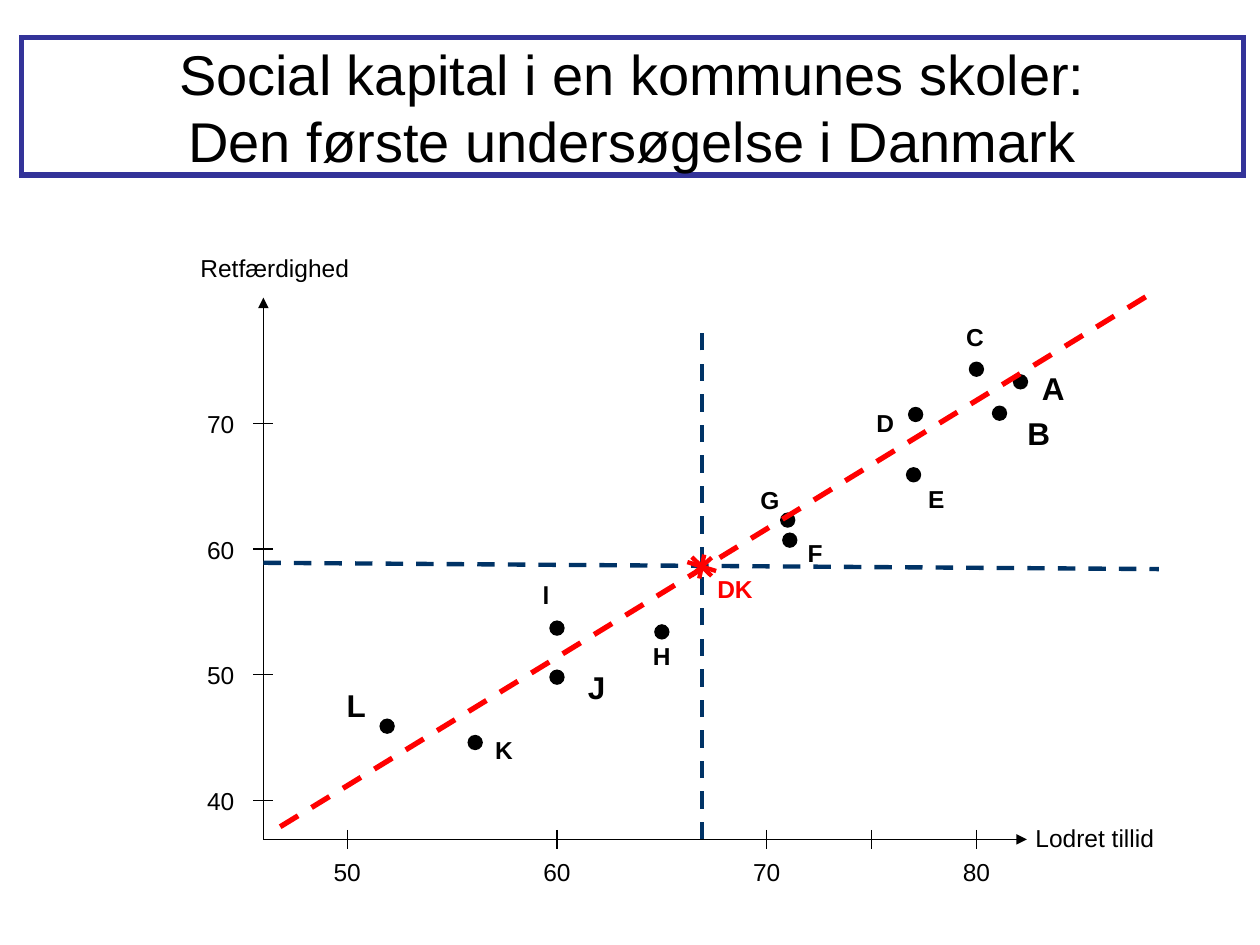
import pptx
import pptx.dml.color
import pptx.enum.dml
import pptx.enum.shapes
import pptx.enum.text
import pptx.oxml
import pptx.util
from pptx.util import Cm

BLACK = pptx.dml.color.RGBColor(0x00, 0x00, 0x00)
RED = pptx.dml.color.RGBColor(0xFF, 0x00, 0x00)
NAVY = pptx.dml.color.RGBColor(0x00, 0x33, 0x66)
FRAME_BLUE = pptx.dml.color.RGBColor(0x33, 0x33, 0x99)

# Axis ranges, in percentage points
X_RANGE = (46, 82.4)
Y_RANGE = (36.9, 80)
DENMARK = (66.9, 58.6)
DOT_SIZE = 0.31

# School: trust, fairness, label offset in cm, label size
SCHOOLS = {
    "A": (82.1, 73.3, 0.66, 0.13, 18),
    "B": (81.1, 70.8, 0.79, 0.41, 18),
    "C": (80, 74.3, -0.03, -0.67, 14),
    "D": (77.1, 70.7, -0.61, 0.15, 14),
    "E": (77, 65.9, 0.46, 0.48, 14),
    "F": (71.1, 60.7, 0.51, 0.25, 14),
    "G": (71, 62.3, -0.36, -0.42, 14),
    "H": (65, 53.4, 0, 0.47, 14),
    "l": (60, 53.7, -0.22, -0.69, 14),
    "J": (60, 49.8, 0.8, 0.2, 18),
    "K": (56.1, 44.6, 0.58, 0.13, 14),
    "L": (51.9, 45.9, -0.62, -0.43, 18),
}


def append_drawing_element(parent, markup):
    namespace = 'xmlns:a="http://schemas.openxmlformats.org/drawingml/2006/main"'
    parent.append(pptx.oxml.parse_xml(f"<a:{markup} {namespace}/>"))


def format_font(font, size, color=BLACK, bold=False):
    values = {"name": "Arial", "size": pptx.util.Pt(size), "bold": bold}
    for name, value in values.items():
        setattr(font, name, value)
    font.color.rgb = color


def add_line(shapes, start, end, color=BLACK, width=0.75, dashed=False, arrow=False):
    line = shapes.add_connector(
        pptx.enum.shapes.MSO_CONNECTOR.STRAIGHT,
        *(Cm(value) for value in (*start, *end)))
    line.line.color.rgb = color
    line.line.width = pptx.util.Pt(width)
    if dashed:
        line.line.dash_style = pptx.enum.dml.MSO_LINE.DASH
    if arrow:
        append_drawing_element(line.line._get_or_add_ln(), 'tailEnd type="triangle"')
    append_drawing_element(line._element.spPr, "effectLst")


def add_label(slide, text, center, size=14, width=1.3, color=BLACK, bold=False):
    height = 0.83 if size == 14 else 1.02
    box = slide.shapes.add_textbox(
        Cm(center[0] - width / 2), Cm(center[1] - height / 2), Cm(width), Cm(height))
    box.text_frame.word_wrap = True
    paragraph = box.text_frame.paragraphs[0]
    paragraph.text = text
    paragraph.alignment = pptx.enum.text.PP_ALIGN.CENTER
    format_font(paragraph.runs[0].font, size, color, bold)


def add_title(slide, left, top, width, height):
    title = slide.shapes.title
    box = {"left": left, "top": top, "width": width, "height": height}
    for name, value in box.items():
        setattr(title, name, Cm(value))
    title.line.color.rgb = FRAME_BLUE
    title.line.width = pptx.util.Pt(3)
    append_drawing_element(title.line._get_or_add_ln(), 'miter lim="800000"')
    frame = title.text_frame
    frame.text = "Social kapital i en kommunes skoler:\nDen første undersøgelse i Danmark"
    frame.word_wrap = True
    frame.auto_size = pptx.enum.text.MSO_AUTO_SIZE.NONE
    frame.vertical_anchor = pptx.enum.text.MSO_ANCHOR.MIDDLE
    for paragraph in frame.paragraphs:
        paragraph.alignment = pptx.enum.text.PP_ALIGN.CENTER
        format_font(paragraph.runs[0].font, 32)


def add_diagram(slide, left, top, width, height):
    bottom = top + height

    def position(trust, fairness):
        across = (trust - X_RANGE[0]) / (X_RANGE[1] - X_RANGE[0])
        up = (fairness - Y_RANGE[0]) / (Y_RANGE[1] - Y_RANGE[0])
        return left + across * width, bottom - up * height

    # Axes and their titles
    shapes = slide.shapes
    add_line(shapes, (left, bottom), (left, top), arrow=True)
    add_line(shapes, (left, bottom), (left + width, bottom), arrow=True)
    add_label(slide, "Retfærdighed", (left + 0.23, top - 0.6), width=5.3)
    add_label(slide, "Lodret tillid", (left + width + 1.37, bottom - 0.04), width=3.45)

    # Ticks and their numbers
    for fairness in (40, 50, 60, 70):
        y = position(0, fairness)[1]
        add_line(shapes, (left - 0.2, y), (left + 0.2, y))
        add_label(slide, str(fairness), (left - 0.86, y))
    for trust in (50, 60, 70, 75, 80):
        x = position(trust, 0)[0]
        add_line(shapes, (x, bottom - 0.19), (x, bottom + 0.19))
        if trust % 10 == 0:
            add_label(slide, str(trust), (x, bottom + 0.65))

    # Danish averages
    average = {"color": NAVY, "width": 2.5, "dashed": True}
    add_line(shapes, position(DENMARK[0], Y_RANGE[0]), position(DENMARK[0], 77.5), **average)
    add_line(shapes, position(46, 58.9), position(88.7, 58.4), **average)

    # Schools
    for name, (trust, fairness, shift_x, shift_y, size) in SCHOOLS.items():
        x, y = position(trust, fairness)
        dot = shapes.add_shape(
            pptx.enum.shapes.MSO_SHAPE.OVAL,
            Cm(x - DOT_SIZE / 2), Cm(y - DOT_SIZE / 2), Cm(DOT_SIZE), Cm(DOT_SIZE))
        dot.shadow.inherit = False
        dot.fill.solid()
        dot.fill.fore_color.rgb = BLACK
        dot.line.fill.background()
        add_label(slide, name, (x + shift_x, y + shift_y), size, bold=True)

    # Star for Denmark
    x, y = position(*DENMARK)
    star = shapes.add_group_shape()
    for dx, dy in ((0.2, -0.18), (0.2, 0.19), (0.29, 0.09), (0.05, -0.24)):
        add_line(star.shapes, (x - dx, y - dy), (x + dx, y + dy), RED, 2.5)
    add_label(slide, "DK", (x + 0.67, y + 0.45), width=1.5, color=RED, bold=True)

    # Trend
    add_line(shapes, position(46.8, 37.9), position(88.4, 80.4), RED, 3, dashed=True)


def main():
    presentation = pptx.Presentation()
    presentation.slide_width = Cm(25.4)
    presentation.slide_height = Cm(19.05)
    slide = presentation.slides.add_slide(presentation.slide_layouts[5])
    add_title(slide, 0.43, 0.76, 24.64, 2.77)
    add_diagram(slide, 5.31, 6, 15.39, 10.92)
    presentation.save("out.pptx")


if __name__ == "__main__":
    main()
